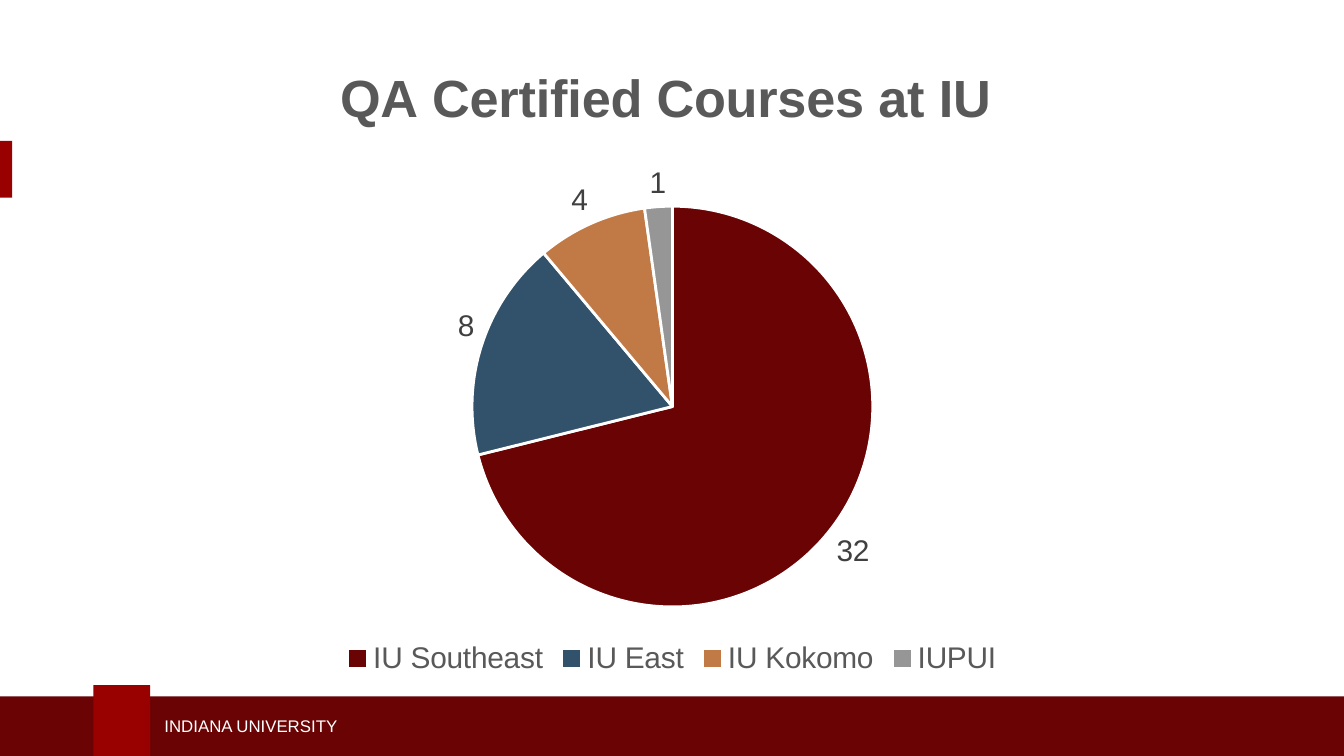
from lxml import etree
from pptx import Presentation
from pptx.chart.data import CategoryChartData
from pptx.dml.color import RGBColor
from pptx.enum import chart as ch, shapes, text
from pptx.oxml.ns import qn
from pptx.util import Pt

CRIMSON = RGBColor(0x99, 0x00, 0x00)
MAROON = RGBColor(0x69, 0x03, 0x04)
BLUE = RGBColor(0x31, 0x52, 0x6A)
COPPER = RGBColor(0xC1, 0x79, 0x45)
SILVER = RGBColor(0x96, 0x96, 0x96)
GRAY = RGBColor(0x59, 0x59, 0x59)
DARK_GRAY = RGBColor(0x40, 0x40, 0x40)
WHITE = RGBColor(0xFF, 0xFF, 0xFF)

FONT = "Arial"
SLIDE_WIDTH, SLIDE_HEIGHT = 720, 405
COURSES = [
    ("IU Southeast", 32, MAROON),
    ("IU East", 8, BLUE),
    ("IU Kokomo", 4, COPPER),
    ("IUPUI", 1, SILVER),
]


def style_font(font, size, color, bold=False):
    font.name, font.size, font.bold = FONT, Pt(size), bold
    font.color.rgb = color


def add_block(slide, left, top, width, height, color):
    block = slide.shapes.add_shape(
        shapes.MSO_SHAPE.RECTANGLE, Pt(left), Pt(top), Pt(width), Pt(height))
    block.shadow.inherit = False
    block.fill.solid()
    block.fill.fore_color.rgb = color
    block.line.fill.background()


def add_label(slide, left, top, width, height, words):
    box = slide.shapes.add_textbox(Pt(left), Pt(top), Pt(width), Pt(height))
    frame = box.text_frame
    frame.word_wrap = True
    frame.vertical_anchor = text.MSO_ANCHOR.MIDDLE
    para = frame.paragraphs[0]
    para.text = words
    style_font(para.font, 9, WHITE)


def place_part(part, index, **fractions):
    """Give a chart part a fixed place, in fractions of the chart area."""
    for old in part.findall(qn("c:layout")):
        part.remove(old)
    layout = etree.Element(qn("c:layout"))
    manual = etree.SubElement(layout, qn("c:manualLayout"))
    if "w" in fractions:
        etree.SubElement(manual, qn("c:layoutTarget"), val="inner")
    for axis in "xy":
        etree.SubElement(manual, qn(f"c:{axis}Mode"), val="edge")
    for name, value in fractions.items():
        etree.SubElement(manual, qn(f"c:{name}"), val=str(value))
    part.insert(index, layout)


def add_course_pie(slide, left, top, width, height):
    data = CategoryChartData()
    data.categories = [campus for campus, _, _ in COURSES]
    data.add_series("Series 1", [count for _, count, _ in COURSES])
    chart = slide.shapes.add_chart(
        ch.XL_CHART_TYPE.PIE, Pt(left), Pt(top), Pt(width), Pt(height), data).chart
    chart.font.name, chart.font.size = FONT, Pt(10)

    # Title
    chart.has_title = True
    para = chart.chart_title.text_frame.paragraphs[0]
    para.text = "QA Certified Courses at IU"
    style_font(para.font, 28, GRAY, bold=True)
    title = chart.chart_title._element
    place_part(title, 1, x=0.21, y=0.03)

    # Legend
    chart.has_legend = True
    chart.legend.position = ch.XL_LEGEND_POSITION.BOTTOM
    chart.legend.include_in_layout = False
    style_font(chart.legend.font, 16, GRAY)

    # Slices and value labels
    plot = chart.plots[0]
    plot.vary_by_categories = True
    place_part(plot._element.getparent(), 0, x=0.33, y=0.26, w=0.34, h=0.63)
    series = plot.series[0]
    for index, (_, _, color) in enumerate(COURSES):
        slice_format = series.points[index].format
        slice_format.fill.solid()
        slice_format.fill.fore_color.rgb = color
        slice_format.line.color.rgb = WHITE
        slice_format.line.width = Pt(1.5)
    labels = series.data_labels
    labels.show_value = True
    labels.position = ch.XL_LABEL_POSITION.OUTSIDE_END
    style_font(labels.font, 16, DARK_GRAY)


def main():
    deck = Presentation()
    deck.slide_width, deck.slide_height = Pt(SLIDE_WIDTH), Pt(SLIDE_HEIGHT)
    slide = deck.slides.add_slide(deck.slide_layouts[6])

    # Side accent
    add_block(slide, 0, 75.5, 6.5, 30.5, CRIMSON)

    # Footer band, tab and name
    add_block(slide, 0, 373, SLIDE_WIDTH, SLIDE_HEIGHT - 373, MAROON)
    add_block(slide, 50, 367, 30.5, SLIDE_HEIGHT - 367, CRIMSON)
    add_label(slide, 81, 380, 284, 18, "INDIANA UNIVERSITY")

    # Course counts
    add_course_pie(slide, 44.5, 19.5, 631.5, 345)

    deck.save("out.pptx")


if __name__ == "__main__":
    main()
